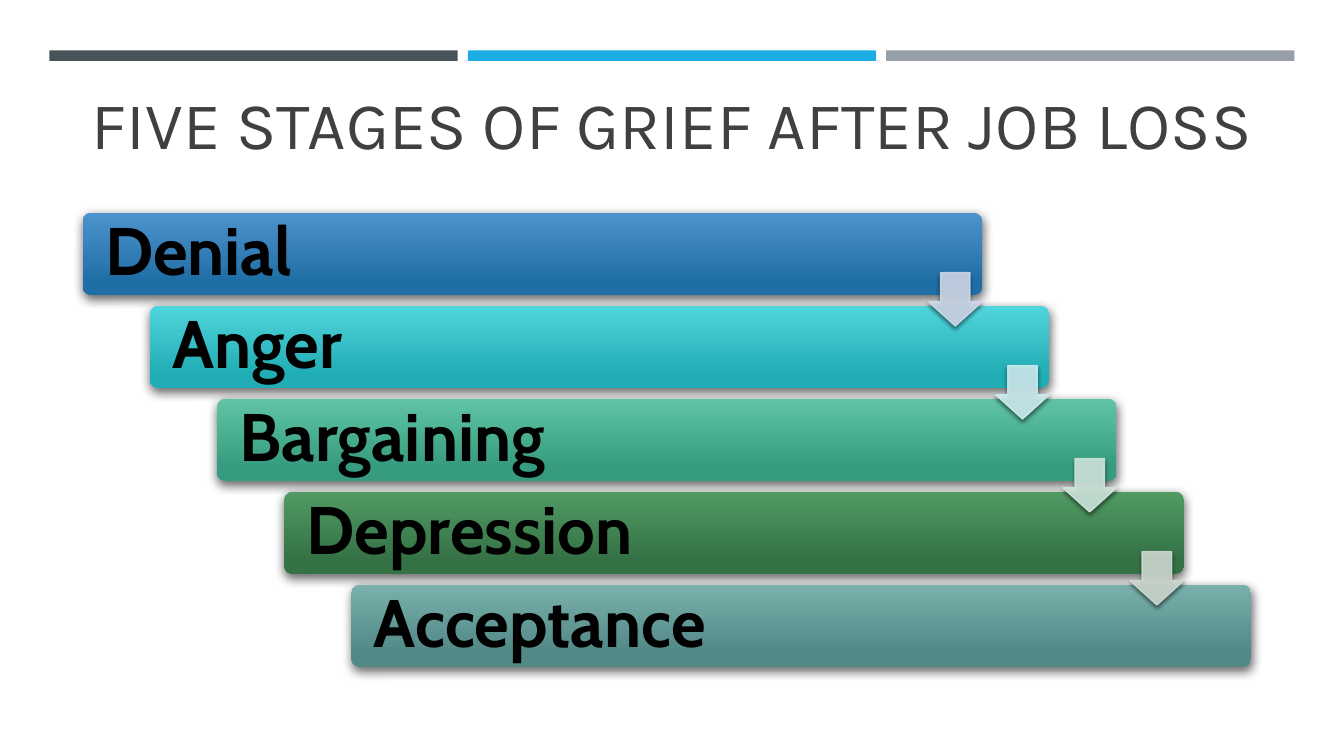
from dataclasses import dataclass

from lxml import etree
from pptx import Presentation
from pptx.dml.color import RGBColor
from pptx.enum.shapes import MSO_SHAPE
from pptx.enum.text import MSO_ANCHOR, MSO_AUTO_SIZE, PP_ALIGN
from pptx.oxml.ns import qn
from pptx.util import Emu, Inches, Pt

RECT, ROUND_RECT, DOWN_ARROW = MSO_SHAPE.RECTANGLE, MSO_SHAPE.ROUNDED_RECTANGLE, MSO_SHAPE.DOWN_ARROW
TOP, MIDDLE = MSO_ANCHOR.TOP, MSO_ANCHOR.MIDDLE
LEFT, CENTER = PP_ALIGN.LEFT, PP_ALIGN.CENTER
NO_FIT = MSO_AUTO_SIZE.NONE

SLIDE_W, SLIDE_H = Inches(13.33), Inches(7.5)
BLACK = RGBColor(0x00, 0x00, 0x00)
TITLE_GREY = RGBColor(0x40, 0x40, 0x40)
SLATE = RGBColor(0x46, 0x53, 0x59)
SKY = RGBColor(0x1C, 0xAD, 0xE4)
SILVER = RGBColor(0x96, 0x9F, 0xA7)
BLUE, DEEP_BLUE, PALE_BLUE = RGBColor(0x4D, 0x93, 0xCD), RGBColor(0x20, 0x6E, 0xA6), RGBColor(0xCD, 0xD9, 0xEA)
CYAN, DEEP_CYAN, PALE_CYAN = RGBColor(0x51, 0xD5, 0xDC), RGBColor(0x21, 0xAD, 0xB5), RGBColor(0xCD, 0xED, 0xF0)
MINT, DEEP_MINT, PALE_MINT = RGBColor(0x60, 0xC3, 0xA5), RGBColor(0x37, 0x9C, 0x7F), RGBColor(0xCF, 0xE7, 0xDD)
GREEN, DEEP_GREEN, PALE_GREEN = RGBColor(0x51, 0x9A, 0x64), RGBColor(0x34, 0x72, 0x46), RGBColor(0xCE, 0xDA, 0xD1)
TEAL, DEEP_TEAL = RGBColor(0x79, 0xB0, 0xAC), RGBColor(0x52, 0x89, 0x86)


@dataclass(frozen=True)
class Box:
    """Position and size in percent of the slide."""
    x: float
    y: float
    w: float
    h: float

    def shifted(self, dx: float, dy: float = 0) -> "Box":
        """Return the same box moved by a share of the slide."""
        return Box(self.x + dx, self.y + dy, self.w, self.h)

    def emu(self) -> tuple[Emu, Emu, Emu, Emu]:
        """Return left, top, width and height as lengths."""
        shares = ((self.x, SLIDE_W), (self.y, SLIDE_H), (self.w, SLIDE_W), (self.h, SLIDE_H))
        return tuple(Emu(round(share * side / 100)) for share, side in shares)


@dataclass(frozen=True)
class Shadow:
    """Outer shadow: opacity in percent, blur and distance in points, angle in degrees."""
    opacity: int
    blur: int
    distance: int
    angle: int


@dataclass(frozen=True)
class Stage:
    """A stage bar with its gradient and the arrow leading on from it."""
    label: str
    light: RGBColor
    deep: RGBColor
    arrow: RGBColor | None = None


TITLE_BOX = Box(3.53, 10.27, 93.02, 17.33)
STRIPE, STRIPE_STEP = Box(3.68, 6.67, 30.38, 1.4), 31.13
BAR = Box(6.15, 28.13, 66.92, 10.85)
ARROW = Box(69.09, 36.05, 3.98, 7.07)
STEP_X, STEP_Y = 5, 12.3
BAR_SHADOW, ARROW_SHADOW = Shadow(60, 7, 3, 84), Shadow(55, 3, 2, 90)
STAGES = (
    Stage("Denial", BLUE, DEEP_BLUE, PALE_BLUE),
    Stage("Anger", CYAN, DEEP_CYAN, PALE_CYAN),
    Stage("Bargaining", MINT, DEEP_MINT, PALE_MINT),
    Stage("Depression", GREEN, DEEP_GREEN, PALE_GREEN),
    Stage("Acceptance", TEAL, DEEP_TEAL),
)


def add_plain(s, kind, box: Box):
    """Add a preset shape without line or shadow."""
    sp = s.shapes.add_shape(kind, *box.emu())
    sp.shadow.inherit = False
    sp.line.fill.background()
    return sp


def set_shadow(sp, shadow: Shadow) -> None:
    """Give a shape a black outer shadow."""
    effects = sp.element.spPr.find(qn("a:effectLst"))
    outer = etree.SubElement(effects, qn("a:outerShdw"), blurRad=str(Pt(shadow.blur)),
                             dist=str(Pt(shadow.distance)), dir=str(shadow.angle * 60000),
                             algn="ctr", rotWithShape="0")
    color = etree.SubElement(outer, qn("a:srgbClr"), val=str(BLACK))
    etree.SubElement(color, qn("a:alpha"), val=str(shadow.opacity * 1000))


def write(tf, text: str, font: str, size: float, color: RGBColor, align, anchor, bold: bool = False) -> None:
    """Write one formatted run into a text frame."""
    tf.word_wrap, tf.auto_size, tf.vertical_anchor = True, NO_FIT, anchor
    p = tf.paragraphs[0]
    p.alignment = align
    r = p.add_run()
    r.text = text
    r.font.name, r.font.size, r.font.bold = font, Pt(size), bold
    r.font.color.rgb = color


def add_title(s, text: str) -> None:
    """Place and format the title placeholder."""
    sp = s.shapes.title
    sp.left, sp.top, sp.width, sp.height = TITLE_BOX.emu()
    write(sp.text_frame, text, "Karla", 47.7, TITLE_GREY, CENTER, TOP)


def add_stripe(s, box: Box, color: RGBColor) -> None:
    """Add one stripe above the title."""
    sp = add_plain(s, RECT, box)
    sp.fill.solid()
    sp.fill.fore_color.rgb = color


def add_bar(s, stage: Stage, box: Box) -> None:
    """Add a labelled gradient bar."""
    sp = add_plain(s, ROUND_RECT, box)
    sp.adjustments[0] = 0.1
    sp.fill.gradient()
    sp.fill.gradient_angle = 270
    for stop, color, position in zip(sp.fill.gradient_stops, (stage.light, stage.deep), (0, 0.84)):
        stop.color.rgb, stop.position = color, position
    set_shadow(sp, BAR_SHADOW)
    tf = sp.text_frame
    tf.margin_left = tf.margin_right = tf.margin_top = tf.margin_bottom = Inches(0.2)
    write(tf, stage.label, "Cabin", 48, BLACK, LEFT, MIDDLE, bold=True)
    tf.paragraphs[0].line_spacing = 0.9


def add_arrow(s, color: RGBColor, box: Box) -> None:
    """Add a slightly transparent arrow to the next bar."""
    sp = add_plain(s, DOWN_ARROW, box)
    sp.adjustments[0], sp.adjustments[1] = 0.55, 0.45
    sp.line.width = Pt(1)
    sp.line.fill.solid()
    for fill in (sp.fill, sp.line.fill):
        fill.solid()
        fill.fore_color.rgb = color
    for srgb in sp.element.spPr.iter(qn("a:srgbClr")):
        etree.SubElement(srgb, qn("a:alpha"), val="90000")
    set_shadow(sp, ARROW_SHADOW)


def main() -> None:
    """Build and save the slide."""
    prs = Presentation()
    prs.slide_width, prs.slide_height = SLIDE_W, SLIDE_H
    s = prs.slides.add_slide(prs.slide_layouts[5])
    for i, color in enumerate((SLATE, SKY, SILVER)):
        add_stripe(s, STRIPE.shifted(i * STRIPE_STEP), color)
    add_title(s, "FIVE STAGES OF GRIEF AFTER JOB LOSS")
    for i, stage in enumerate(STAGES):
        add_bar(s, stage, BAR.shifted(i * STEP_X, i * STEP_Y))
    for i, stage in enumerate(STAGES):
        if stage.arrow is not None:
            add_arrow(s, stage.arrow, ARROW.shifted(i * STEP_X, i * STEP_Y))
    prs.save("out.pptx")


if __name__ == "__main__":
    main()
